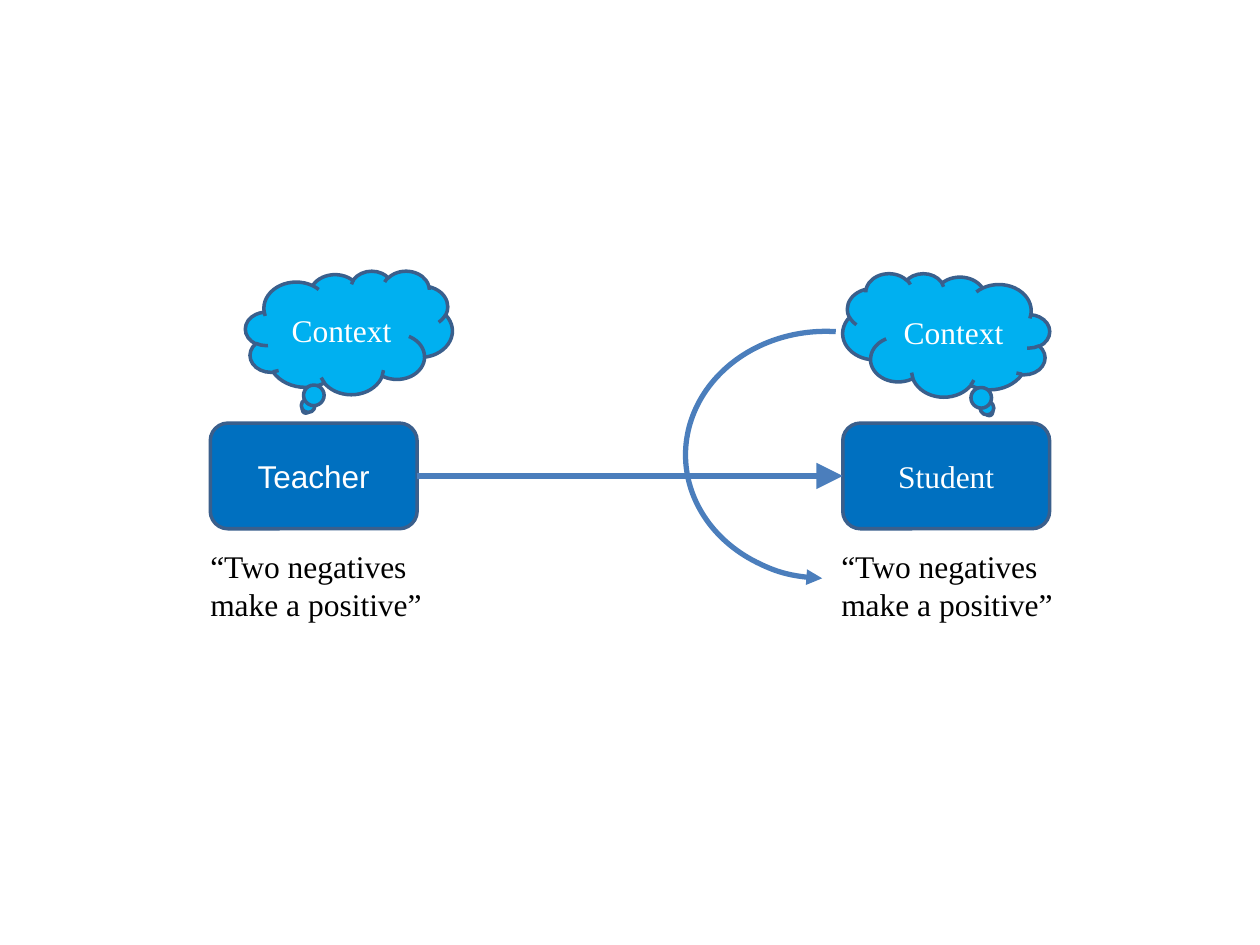
from lxml import etree
from pptx import Presentation
from pptx.dml.color import RGBColor
from pptx.enum.shapes import MSO_CONNECTOR, MSO_SHAPE
from pptx.enum.text import MSO_ANCHOR, MSO_AUTO_SIZE, PP_ALIGN
from pptx.oxml.ns import qn
from pptx.util import Cm, Pt

ROUNDED = MSO_SHAPE.ROUNDED_RECTANGLE
CLOUD = MSO_SHAPE.CLOUD_CALLOUT
ARC = MSO_SHAPE.ARC
STRAIGHT = MSO_CONNECTOR.STRAIGHT
MIDDLE = MSO_ANCHOR.MIDDLE
FIT_SHAPE = MSO_AUTO_SIZE.SHAPE_TO_FIT_TEXT
LEFT, CENTER = PP_ALIGN.LEFT, PP_ALIGN.CENTER

WHITE = RGBColor(0xFF, 0xFF, 0xFF)
BLACK = RGBColor(0x00, 0x00, 0x00)
BLUE = RGBColor(0x00, 0x70, 0xC0)
SKY = RGBColor(0x00, 0xB0, 0xF0)
OUTLINE = RGBColor(0x3A, 0x5F, 0x8C)
ARROW = RGBColor(0x4B, 0x7E, 0xBC)

SERIF = "Times New Roman"
SANS = "Arial"
QUOTE = ["“Two negatives", "make a positive”"]

TEACHER_LEFT, STUDENT_LEFT = 4.24, 16.99
ROLE_TOP, ROLE_WIDTH, ROLE_HEIGHT = 8.53, 4.17, 2.13
CLOUD_HEIGHT = 2.49


def write_text(frame, lines, font=SERIF, size=18, color=BLACK, align=LEFT):
    for index, line in enumerate(lines):
        para = frame.add_paragraph() if index else frame.paragraphs[0]
        para.alignment = align
        span = para.add_run()
        span.text = line
        span.font.name = font
        span.font.size = Pt(size)
        span.font.color.rgb = color


def style_line(line, color, width):
    line.color.rgb = color
    line.width = Pt(width)


def add_arrowhead(shape, end, size):
    outline = shape.line._get_or_add_ln()
    etree.SubElement(outline, qn(f"a:{end}"), type="triangle", w=size, len=size)


class Diagram:
    outline_width = 2
    arrow_width = 3

    def __init__(self, deck):
        self.page = deck.slides.add_slide(deck.slide_layouts[6])

    def shape(self, kind, left, top, width, height):
        shape = self.page.shapes.add_shape(
            kind, Cm(left), Cm(top), Cm(width), Cm(height))
        shape.shadow.inherit = False
        return shape

    def labelled(self, kind, text, left, top, height, fill, font=SERIF):
        shape = self.shape(kind, left, top, ROLE_WIDTH, height)
        shape.fill.solid()
        shape.fill.fore_color.rgb = fill
        style_line(shape.line, OUTLINE, self.outline_width)
        frame = shape.text_frame
        frame.vertical_anchor = MIDDLE
        frame.margin_left = frame.margin_right = Cm(0.18)
        frame.margin_top = frame.margin_bottom = Cm(0.1)
        write_text(frame, [text], font=font, color=WHITE, align=CENTER)
        return shape

    def role(self, text, left, font=SERIF):
        self.labelled(ROUNDED, text, left, ROLE_TOP, ROLE_HEIGHT, BLUE, font)

    def context(self, left, top, flipped=False):
        cloud = self.labelled(CLOUD, "Context", left, top, CLOUD_HEIGHT, SKY)
        if flipped:
            cloud.element.spPr.find(qn("a:xfrm")).set("flipH", "1")

    def quote(self, left):
        box = self.page.shapes.add_textbox(Cm(left), Cm(10.9), Cm(4.83), Cm(1.8))
        frame = box.text_frame
        frame.word_wrap = False
        frame.auto_size = FIT_SHAPE
        write_text(frame, QUOTE)

    def arrow(self, start, end, height):
        line = self.page.shapes.add_connector(
            STRAIGHT, Cm(start), Cm(height), Cm(end), Cm(height))
        style_line(line.line, ARROW, self.arrow_width)
        add_arrowhead(line, "tailEnd", "lg")
        etree.SubElement(line.element.spPr, qn("a:effectLst"))

    def loop(self, left, top, width, height, angles):
        arc = self.shape(ARC, left, top, width, height)
        for index, angle in enumerate(angles):
            arc.adjustments[index] = angle * 0.6
        arc.fill.background()
        style_line(arc.line, ARROW, self.arrow_width)
        add_arrowhead(arc, "headEnd", "med")


def main():
    deck = Presentation()
    deck.slide_width, deck.slide_height = Cm(25.4), Cm(19.05)
    diagram = Diagram(deck)
    diagram.role("Teacher", TEACHER_LEFT, font=SANS)
    diagram.role("Student", STUDENT_LEFT)
    diagram.arrow(TEACHER_LEFT + ROLE_WIDTH, STUDENT_LEFT,
                  ROLE_TOP + ROLE_HEIGHT / 2)
    diagram.quote(3.99)
    diagram.context(4.95, 5.46)
    diagram.context(STUDENT_LEFT, 5.51, flipped=True)
    diagram.quote(16.71)
    diagram.loop(13.82, 6.68, 5.66, 4.98, (91.72, 274.58))
    deck.save("out.pptx")


if __name__ == "__main__":
    main()
